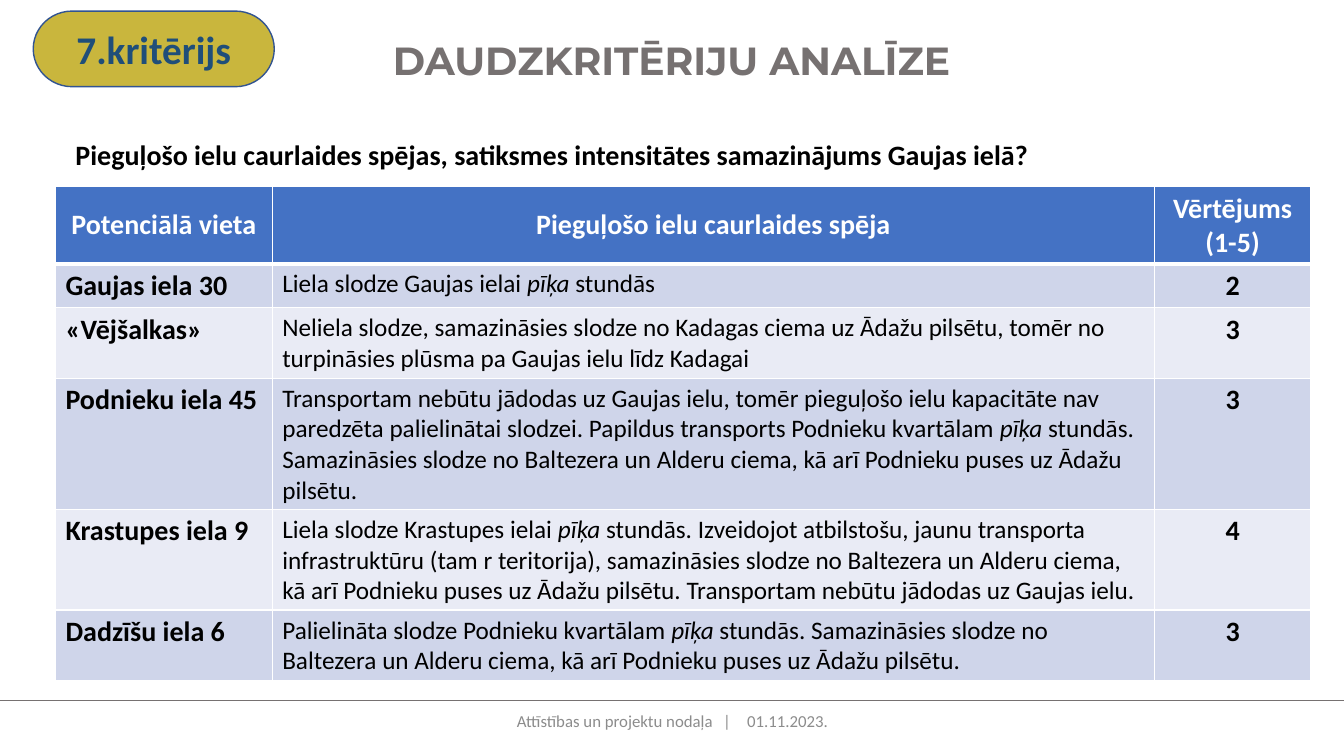
from dataclasses import dataclass

from lxml.etree import SubElement
from pptx import Presentation
from pptx.dml.color import RGBColor
from pptx.enum.shapes import MSO_CONNECTOR, MSO_SHAPE
from pptx.enum.text import MSO_ANCHOR, PP_ALIGN
from pptx.oxml.ns import qn
from pptx.util import Inches, Pt


@dataclass(frozen=True)
class Theme:
    body_font: str = "Calibri"
    title_font: str = "Montserrat"
    title_size: int = 28
    label_size: int = 20
    body_size: int = 18
    footer_size: int = 12
    black: str = "000000"
    white: str = "FFFFFF"
    grey: str = "767171"
    footer: str = "8C8C8C"
    header: str = "4472C4"
    bands: tuple = ("CFD5EA", "E9EBF5")
    badge: str = "C9B63D"
    badge_line: str = "325491"
    badge_text: str = "1F4E79"


class SlideBuilder:
    def __init__(self, slide, theme):
        self.slide = slide
        self.theme = theme

    def add_runs(self, frame, parts, size, color, bold=False, font=None,
                 align=PP_ALIGN.LEFT):
        """Fill the first paragraph; each part is (text, italic)."""
        paragraph = frame.paragraphs[0]
        paragraph.alignment = align
        for text, italic in parts:
            run = paragraph.add_run()
            run.text = text
            run.font.name = font or self.theme.body_font
            run.font.size = Pt(size)
            run.font.bold = bold
            run.font.italic = italic
            run.font.color.rgb = RGBColor.from_string(color)
        return paragraph

    def text(self, box, parts, size, color, anchor=MSO_ANCHOR.TOP, **style):
        frame = self.slide.shapes.add_textbox(*map(Inches, box)).text_frame
        frame.word_wrap = True
        frame.vertical_anchor = anchor
        return self.add_runs(frame, parts, size, color, **style)

    def rule(self, start, end, color, width):
        rule = self.slide.shapes.add_connector(
            MSO_CONNECTOR.STRAIGHT, *map(Inches, start + end))
        rule.line.color.rgb = RGBColor.from_string(color)
        rule.line.width = Pt(width)
        SubElement(rule._element.spPr, qn("a:effectLst"))

    def badge(self, box, text):
        theme = self.theme
        badge = self.slide.shapes.add_shape(
            MSO_SHAPE.FLOWCHART_TERMINATOR, *map(Inches, box))
        badge.shadow.inherit = False
        badge.fill.solid()
        badge.fill.fore_color.rgb = RGBColor.from_string(theme.badge)
        badge.line.color.rgb = RGBColor.from_string(theme.badge_line)
        badge.line.width = Pt(1)
        badge.text_frame.vertical_anchor = MSO_ANCHOR.MIDDLE
        self.add_runs(badge.text_frame, [(text, False)], theme.title_size,
                      theme.badge_text, bold=True, align=PP_ALIGN.CENTER)

    def cell(self, cell, parts, fill, size, color, bottom=1, **style):
        properties = cell._tc.get_or_add_tcPr()
        for side, width in zip("LRTB", (1, 1, 1, bottom)):
            border = SubElement(properties, qn(f"a:ln{side}"), w=str(Pt(width)))
            paint = SubElement(border, qn("a:solidFill"))
            SubElement(paint, qn("a:srgbClr"), val=self.theme.white)
        cell.fill.solid()
        cell.fill.fore_color.rgb = RGBColor.from_string(fill)
        self.add_runs(cell.text_frame, parts, size, color, **style)

    def table(self, box, widths, heights, headings, sites):
        theme = self.theme
        table = self.slide.shapes.add_table(
            len(heights), len(widths), *map(Inches, box)).table
        for column, width in zip(table.columns, widths):
            column.width = Inches(width)
        for row, height in zip(table.rows, heights):
            row.height = Inches(height)

        # Heading row
        for column, heading in enumerate(headings):
            cell = table.cell(0, column)
            cell.vertical_anchor = MSO_ANCHOR.MIDDLE
            self.cell(cell, [(heading, False)], theme.header, theme.label_size,
                      theme.white, bottom=3, bold=True, align=PP_ALIGN.CENTER)

        # One banded row for each site
        for row, (site, assessment, score) in enumerate(sites, 1):
            fill = theme.bands[(row - 1) % 2]
            self.cell(table.cell(row, 0), [(site, False)], fill,
                      theme.label_size, theme.black, bold=True)
            self.cell(table.cell(row, 1), assessment, fill,
                      theme.body_size, theme.black)
            self.cell(table.cell(row, 2), [(score, False)], fill,
                      theme.label_size, theme.black, bold=True,
                      align=PP_ALIGN.CENTER)


PEAK = ("pīķa", True)
HEADINGS = ("Potenciālā vieta", "Pieguļošo ielu caurlaides spēja",
            "Vērtējums (1-5)")
SITES = [
    ("Gaujas iela 30",
     [("Liela slodze Gaujas ielai ", False), PEAK, (" stundās", False)], "2"),
    ("«Vējšalkas»",
     [("Neliela slodze, samazināsies slodze no Kadagas ciema uz Ādažu pilsētu, "
       "tomēr no turpināsies plūsma pa Gaujas ielu līdz Kadagai", False)], "3"),
    ("Podnieku iela 45",
     [("Transportam nebūtu jādodas uz Gaujas ielu, tomēr pieguļošo ielu "
       "kapacitāte nav paredzēta palielinātai slodzei. Papildus transports "
       "Podnieku kvartālam ", False), PEAK,
      (" stundās. Samazināsies slodze no Baltezera un Alderu ciema, kā arī "
       "Podnieku puses uz Ādažu pilsētu.", False)], "3"),
    ("Krastupes iela 9",
     [("Liela slodze Krastupes ielai ", False), PEAK,
      (" stundās. Izveidojot atbilstošu, jaunu transporta infrastruktūru "
       "(tam r teritorija), samazināsies slodze no Baltezera un Alderu ciema, "
       "kā arī Podnieku puses uz Ādažu pilsētu. Transportam nebūtu jādodas uz "
       "Gaujas ielu.", False)], "4"),
    ("Dadzīšu iela 6",
     [("Palielināta slodze Podnieku kvartālam ", False), PEAK,
      (" stundās. Samazināsies slodze no Baltezera un Alderu ciema, kā arī "
       "Podnieku puses uz Ādažu pilsētu.", False)], "3"),
]


def main():
    deck = Presentation()
    deck.slide_width, deck.slide_height = Inches(13.33), Inches(7.5)
    theme = Theme()
    builder = SlideBuilder(deck.slides.add_slide(deck.slide_layouts[6]), theme)

    # Footer, with wide letter spacing around the divider
    footer = builder.text(
        (4.42, 6.95, 4.5, 0.4),
        [("Attīstības un projektu nodaļa", False), (" | ", False),
         ("01.11.2023.", False)],
        theme.footer_size, theme.footer, anchor=MSO_ANCHOR.MIDDLE,
        align=PP_ALIGN.CENTER)
    footer.runs[1]._r.get_or_add_rPr().set("spc", "450")
    builder.rule((0, 6.95), (13.33, 6.95), theme.grey, 0.5)

    # Title and question
    builder.text((0.44, 0.31, 12.44, 0.57), [("DAUDZKRITĒRIJU ANALĪZE", False)],
                 theme.title_size, theme.grey, bold=True,
                 font=theme.title_font, align=PP_ALIGN.CENTER)
    question = builder.text(
        (0.65, 1.35, 12.24, 0.34),
        [("Pieguļošo ielu caurlaides spējas, satiksmes intensitātes "
          "samazinājums Gaujas ielā?", False)],
        theme.label_size, theme.black, bold=True)
    question.line_spacing = 0.9

    # Assessment of the sites
    builder.table((0.55, 1.85, 12.45, 4.9), (2.15, 8.75, 1.55),
                  (0.76, 0.43, 0.7, 1.3, 1, 0.7), HEADINGS, SITES)

    # Criterion number
    builder.badge((0.33, 0.11, 2.39, 0.75), "7.kritērijs")

    deck.save("out.pptx")


if __name__ == "__main__":
    main()
